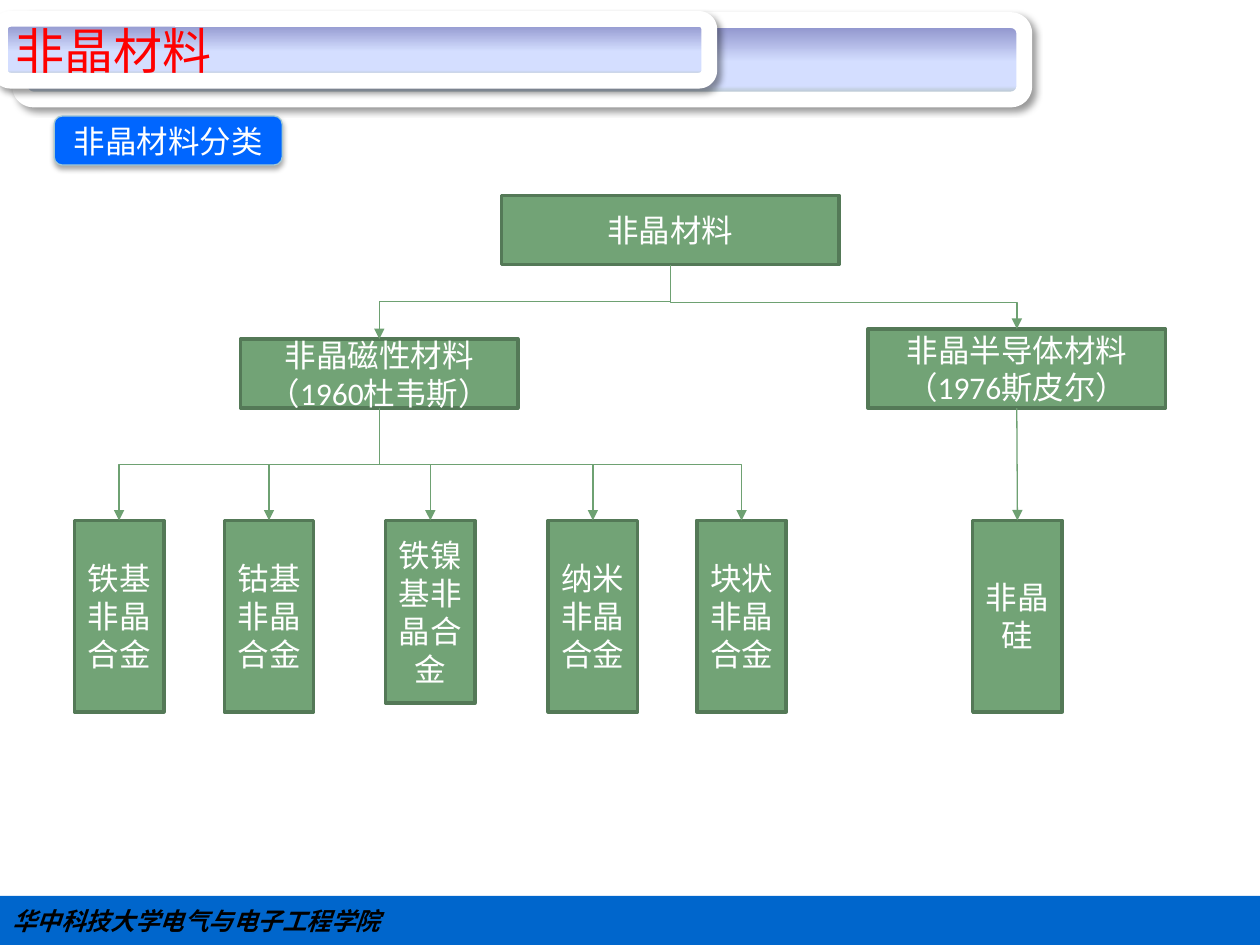
from typing import NamedTuple, Optional

from lxml.etree import SubElement
from pptx import Presentation
from pptx.dml.color import RGBColor
from pptx.enum.shapes import MSO_CONNECTOR as Link, MSO_SHAPE as Preset
from pptx.enum.text import MSO_ANCHOR as Anchor, PP_ALIGN as Align
from pptx.oxml.ns import qn
from pptx.shapes.autoshape import Shape
from pptx.util import Inches, Pt

COLORS = {
    "black": "000000",
    "white": "FFFFFF",
    "red": "FF0000",
    "footer": "0066CC",
    "label": "0066FF",
    "label edge": "A3C9D3",
    "node": "72A376",
    "node edge": "547957",
    "arrow": "6EA172",
}
BANNER_STOPS = [(0, "8488C4"), (53, "D4DEFF"), (83, "D4DEFF"), (100, "96AB94")]
BOTTOM_SITE, TOP_SITE = 2, 0


class Area(NamedTuple):
    left: float
    top: float
    width: float
    height: float


class Node(NamedTuple):
    name: str
    lines: list[str]
    area: Area
    parent: Optional[str] = None
    bend: float = 0.5


class Shadow(NamedTuple):
    opacity: int
    blur: float
    distance: float
    angle: int


LEAF_TOP, LEAF_WIDTH, LEAF_HEIGHT = 4.13, 0.71, 1.52


def leaf(text: str, left: float, parent: str, height: float = LEAF_HEIGHT) -> Node:
    return Node(text, [text], Area(left, LEAF_TOP, LEAF_WIDTH, height), parent)


NODES = [
    Node("root", ["非晶材料"], Area(3.98, 1.55, 2.68, 0.55)),
    Node("magnetic", ["非晶磁性材料（1960杜韦斯）"], Area(1.91, 2.69, 2.2, 0.55), "root"),
    Node("semiconductor", ["非晶半导体材料", "（1976斯皮尔）"],
         Area(6.89, 2.61, 2.36, 0.63), "root", 0.59),
    leaf("铁基非晶合金", 0.59, "magnetic"),
    leaf("钴基非晶合金", 1.78, "magnetic"),
    leaf("铁镍基非晶合金", 3.06, "magnetic", 1.45),
    leaf("纳米非晶合金", 4.35, "magnetic"),
    leaf("块状非晶合金", 5.53, "magnetic"),
    leaf("非晶硅", 7.72, "semiconductor"),
]


def color(name: str) -> RGBColor:
    return RGBColor.from_string(COLORS[name])


def add_box(page, preset: Preset, area: Area, fill: Optional[str] = None,
            edge: Optional[str] = None, edge_width: float = 0) -> Shape:
    box = page.shapes.add_shape(preset, *map(Inches, area))
    box.shadow.inherit = False
    if fill:
        box.fill.solid()
        box.fill.fore_color.rgb = color(fill)
    if edge:
        box.line.color.rgb = color(edge)
        box.line.width = Pt(edge_width)
    else:
        box.line.fill.background()
    return box


def write(box: Shape, lines: list[str], size: int, font: str, ink: str,
          align: Align = Align.CENTER, strong: bool = False) -> None:
    frame = box.text_frame
    frame.word_wrap = True
    frame.vertical_anchor = Anchor.MIDDLE
    for index, line in enumerate(lines):
        para = frame.add_paragraph() if index else frame.paragraphs[0]
        para.text = line
        para.alignment = align
        para.font.size = Pt(size)
        para.font.name = font
        para.font.color.rgb = color(ink)
        para.font.bold = para.font.italic = strong


def add_shadow(box: Shape, shadow: Shadow) -> None:
    effects = box.element.spPr.find(qn("a:effectLst"))
    outer = SubElement(effects, qn("a:outerShdw"), blurRad=str(Pt(shadow.blur)),
                       dist=str(Pt(shadow.distance)), dir=str(shadow.angle * 60000),
                       algn="tl", rotWithShape="0")
    tint = SubElement(outer, qn("a:srgbClr"), val=COLORS["black"])
    SubElement(tint, qn("a:alpha"), val=str(shadow.opacity * 1000))


def add_banner(page, area: Area) -> Shape:
    box = add_box(page, Preset.ROUNDED_RECTANGLE, area, edge="white", edge_width=9)
    box.fill.gradient()
    box.fill.gradient_angle = 270
    stops = box.element.spPr.find(".//" + qn("a:gsLst"))
    for stop in list(stops):
        stops.remove(stop)
    for position, value in BANNER_STOPS:
        stop = SubElement(stops, qn("a:gs"), pos=str(position * 1000))
        SubElement(stop, qn("a:srgbClr"), val=value)
    add_shadow(box, Shadow(40, 4, 3, 45))
    return box


def add_arrow(page, parent: Shape, child: Shape, bend: float) -> None:
    start_x = parent.left + parent.width // 2
    start_y = parent.top + parent.height
    end_x = child.left + child.width // 2
    across, down = end_x - start_x, child.top - start_y
    straight = abs(across) < Inches(0.02)
    kind = Link.STRAIGHT if straight else Link.ELBOW
    arrow = page.shapes.add_connector(kind, start_x, start_y, end_x, child.top)
    arrow.begin_connect(parent, BOTTOM_SITE)
    arrow.end_connect(child, TOP_SITE)
    properties = arrow.element.spPr
    if not straight:
        arrow.width, arrow.height = down, abs(across)
        arrow.left = (start_x + end_x - down) // 2
        arrow.top = (start_y + child.top - abs(across)) // 2
        transform = properties.find(qn("a:xfrm"))
        transform.set("rot", str((270 if across > 0 else 90) * 60000))
        transform.set("flipH", "1" if across > 0 else "0")
        transform.set("flipV", "0")
        geometry = properties.find(qn("a:prstGeom"))
        guides = geometry.find(qn("a:avLst"))
        if guides is None:
            guides = SubElement(geometry, qn("a:avLst"))
        SubElement(guides, qn("a:gd"), name="adj1", fmla=f"val {round(bend * 100000)}")
    arrow.line.color.rgb = color("arrow")
    arrow.line.width = Pt(0.75)
    SubElement(properties.find(qn("a:ln")), qn("a:tailEnd"), type="triangle")
    SubElement(properties, qn("a:effectLst"))


def add_tree(page) -> None:
    boxes: dict[str, Shape] = {}
    for node in NODES:
        box = add_box(page, Preset.RECTANGLE, node.area, "node", "node edge", 2)
        write(box, node.lines, 18, "Calibri", "white")
        boxes[node.name] = box
    for node in NODES:
        if node.parent:
            add_arrow(page, boxes[node.parent], boxes[node.name], node.bend)


def main() -> None:
    deck = Presentation()
    deck.slide_width, deck.slide_height = Inches(10), Inches(7.5)
    page = deck.slides.add_slide(deck.slide_layouts[6])

    add_banner(page, Area(0.16, 0.16, 7.97, 0.63))
    footer = add_box(page, Preset.RECTANGLE, Area(0, 7.11, 10, 0.39), "footer")
    write(footer, ["华中科技大学电气与电子工程学院"], 14, "Noto Sans CJK SC", "black",
          Align.LEFT, strong=True)
    title = add_banner(page, Area(0, 0.15, 5.63, 0.49))
    write(title, ["非晶材料"], 28, "Arial", "red", Align.JUSTIFY)
    label = add_box(page, Preset.ROUNDED_RECTANGLE, Area(0.43, 0.92, 1.81, 0.39),
                    "label", "label edge", 0.75)
    add_shadow(label, Shadow(35, 3.1, 1.8, 90))
    write(label, ["非晶材料分类"], 18, "Calibri", "white")
    add_tree(page)

    deck.save("out.pptx")


if __name__ == "__main__":
    main()
